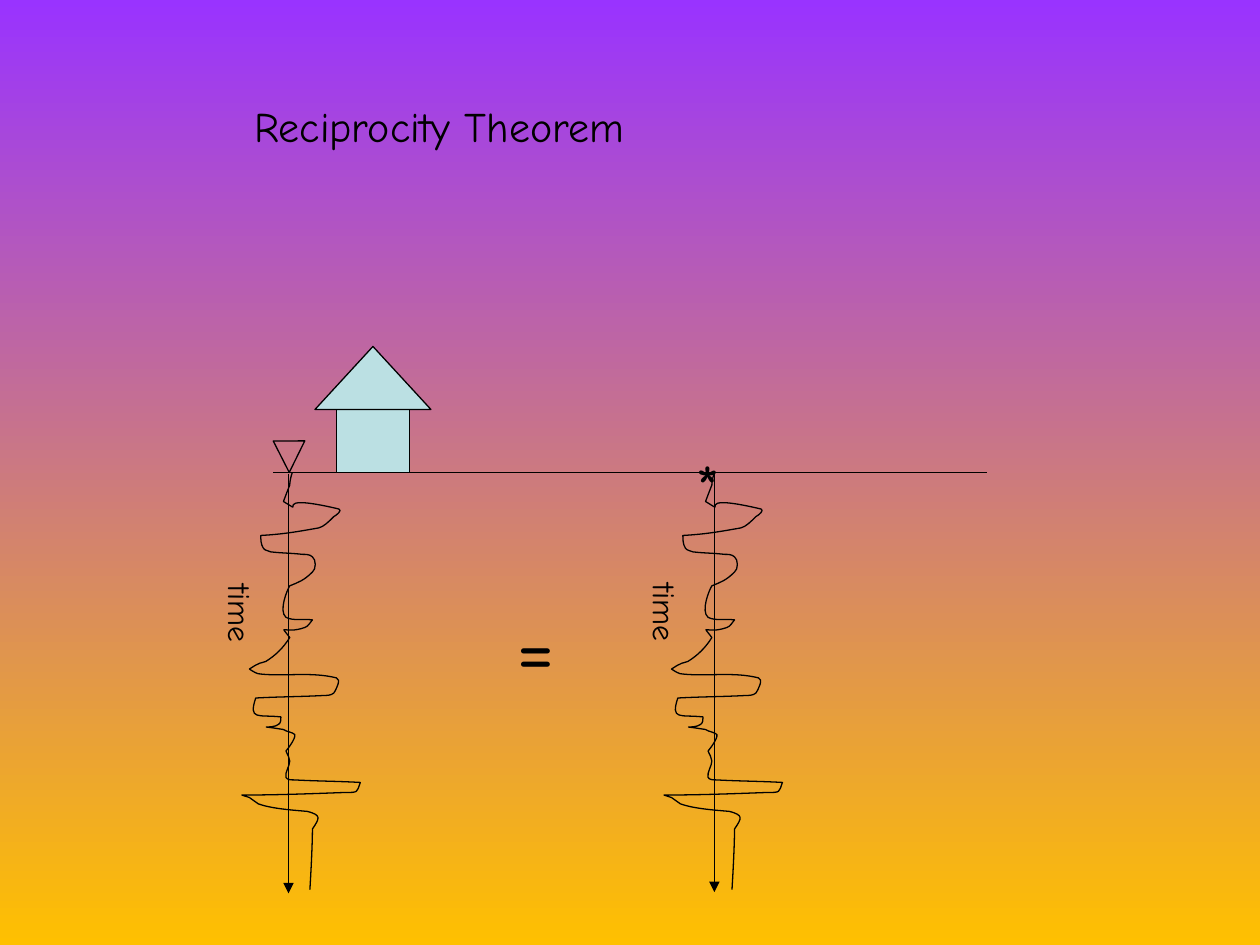
from lxml import etree
from pptx import Presentation
from pptx.dml.color import RGBColor
from pptx.enum.shapes import MSO_CONNECTOR, MSO_SHAPE
from pptx.enum.text import MSO_AUTO_SIZE, PP_ALIGN
from pptx.oxml.ns import qn
from pptx.util import Inches, Pt

STRAIGHT = MSO_CONNECTOR.STRAIGHT
RECTANGLE = MSO_SHAPE.RECTANGLE
TRIANGLE = MSO_SHAPE.ISOSCELES_TRIANGLE
FIT_SHAPE = MSO_AUTO_SIZE.SHAPE_TO_FIT_TEXT
LEFT, CENTER = PP_ALIGN.LEFT, PP_ALIGN.CENTER

FONT = "Comic Neue"
COLORS = {"sky": "9933FF", "earth": "FFC000", "house": "BBE0E3", "ink": "000000"}
STROKE = Pt(0.75)

WIGGLE_UNIT = Inches(0.01)
WIGGLE_START = (40, 0)
WIGGLE_CURVES = [
    (39, 3, 38, 7, 38, 10), (36, 15, 33, 23, 33, 23),
    (54, 36, 18, 15, 77, 29), (80, 30, 75, 34, 73, 35),
    (69, 39, 65, 43, 61, 44), (44, 47, 33, 49, 15, 50),
    (15, 53, 15, 57, 17, 60), (18, 62, 21, 62, 23, 63),
    (31, 64, 40, 64, 48, 65), (51, 65, 54, 65, 56, 67),
    (59, 69, 59, 77, 56, 79), (49, 86, 45, 87, 38, 90),
    (36, 93, 29, 110, 35, 115), (41, 118, 49, 116, 56, 117),
    (54, 119, 53, 122, 50, 123), (33, 129, 29, 119, 38, 131),
    (33, 139, 27, 145, 19, 150), (17, 151, 14, 151, 13, 152),
    (10, 153, 8, 155, 6, 156), (9, 158, 12, 160, 15, 160),
    (35, 162, 55, 158, 75, 163), (79, 164, 75, 172, 73, 175),
    (71, 177, 67, 177, 65, 177), (47, 178, 29, 178, 11, 179),
    (5, 197, 13, 192, 31, 194), (31, 196, 31, 199, 29, 200),
    (24, 204, 8, 200, 33, 204), (36, 206, 40, 206, 42, 208),
    (43, 211, 36, 220, 35, 221), (36, 224, 38, 226, 38, 229),
    (38, 233, 34, 238, 35, 242), (36, 244, 39, 244, 42, 244),
    (59, 245, 76, 245, 94, 246), (91, 254, 93, 254, 81, 254),
    (54, 255, 27, 256, 0, 256), (2, 257, 4, 257, 6, 258),
    (9, 259, 10, 262, 13, 263), (24, 267, 41, 268, 52, 269),
    (63, 272, 62, 274, 56, 283), (56, 299, 54, 331, 54, 331),
]


def rgb(name):
    return RGBColor.from_string(COLORS[name])


def add_text(slide, text, left, top, width, height, size, align=LEFT, wrap=True, rotation=0):
    box = slide.shapes.add_textbox(Inches(left), Inches(top), Inches(width), Inches(height))
    box.rotation = rotation
    frame = box.text_frame
    frame.word_wrap = wrap
    frame.auto_size = FIT_SHAPE
    paragraph = frame.paragraphs[0]
    paragraph.alignment = align
    run = paragraph.add_run()
    run.text = text
    run.font.name = FONT
    run.font.size = Pt(size)
    run.font.color.rgb = rgb("ink")


def style_outline(shape, fill=None):
    shape.shadow.inherit = False
    if fill:
        shape.fill.solid()
        shape.fill.fore_color.rgb = rgb(fill)
    else:
        shape.fill.background()
    shape.line.color.rgb = rgb("ink")
    shape.line.width = STROKE


def add_outline(slide, preset, left, top, width, height, fill=None, rotation=0):
    shape = slide.shapes.add_shape(preset, Inches(left), Inches(top), Inches(width), Inches(height))
    shape.rotation = rotation
    style_outline(shape, fill)


def add_line(slide, x1, y1, x2, y2, arrow=False):
    line = slide.shapes.add_connector(STRAIGHT, Inches(x1), Inches(y1), Inches(x2), Inches(y2))
    line.line.color.rgb = rgb("ink")
    line.line.width = STROKE
    if arrow:
        etree.SubElement(line.line._get_or_add_ln(), qn("a:tailEnd"), type="triangle")
    etree.SubElement(line._element.spPr, qn("a:effectLst"))


def draw_trace(slide, left, top):
    builder = slide.shapes.build_freeform(*WIGGLE_START, scale=WIGGLE_UNIT)
    builder.add_line_segments([curve[4:] for curve in WIGGLE_CURVES], close=False)
    trace = builder.convert_to_shape(Inches(left), Inches(top))
    segments = list(trace._element.iter(qn("a:lnTo")))
    for segment, curve in zip(segments, WIGGLE_CURVES):
        bezier = etree.Element(qn("a:cubicBezTo"))
        for x, y in zip(curve[::2], curve[1::2]):
            etree.SubElement(bezier, qn("a:pt"), x=str(x), y=str(y))
        segment.getparent().replace(segment, bezier)
    style_outline(trace)


def draw_time_axis(slide, x, top, label_left, label_top):
    add_line(slide, x, top, x, top + 3.33, arrow=True)
    add_text(slide, "time", label_left, label_top, 0.72, 0.4, 18,
             align=CENTER, wrap=False, rotation=90)


def draw_house(slide, left, top, width, height):
    body_left, body_width, body_height = left + 0.17, 0.58, 0.67
    add_outline(slide, RECTANGLE, body_left, top + height - body_height,
                body_width, body_height, fill="house")
    add_outline(slide, TRIANGLE, left, top, width, 0.5, fill="house")


def draw_surface(slide, left, ground, width):
    add_line(slide, left, ground, left + width, ground)
    draw_house(slide, left + 0.33, ground - 1, 0.92, 1)
    add_text(slide, "*", left + 3.25, ground - 0.25, 0.92, 0.7, 36)
    add_outline(slide, TRIANGLE, left, ground - 0.25, 0.25, 0.25, rotation=179.7)


def paint_background(slide):
    fill = slide.background.fill
    fill.gradient()
    fill.gradient_angle = 270
    for stop, color in zip(fill.gradient_stops, ("sky", "earth")):
        stop.color.rgb = rgb(color)


def main():
    presentation = Presentation()
    presentation.slide_width, presentation.slide_height = Inches(10), Inches(7.5)
    slide = presentation.slides.add_slide(presentation.slide_layouts[6])
    paint_background(slide)
    add_text(slide, "Reciprocity Theorem", 1.92, 0.75, 5.42, 0.5, 24)
    draw_surface(slide, 2.17, 3.75, 5.66)
    draw_trace(slide, 5.27, 3.75)
    add_text(slide, "=", 4, 4.67, 1.25, 0.9, 48)
    draw_trace(slide, 1.92, 3.75)
    draw_time_axis(slide, 5.67, 3.75, label_left=4.92, label_top=4.66)
    draw_time_axis(slide, 2.29, 3.76, label_left=1.55, label_top=4.67)
    presentation.save("out.pptx")


if __name__ == "__main__":
    main()
